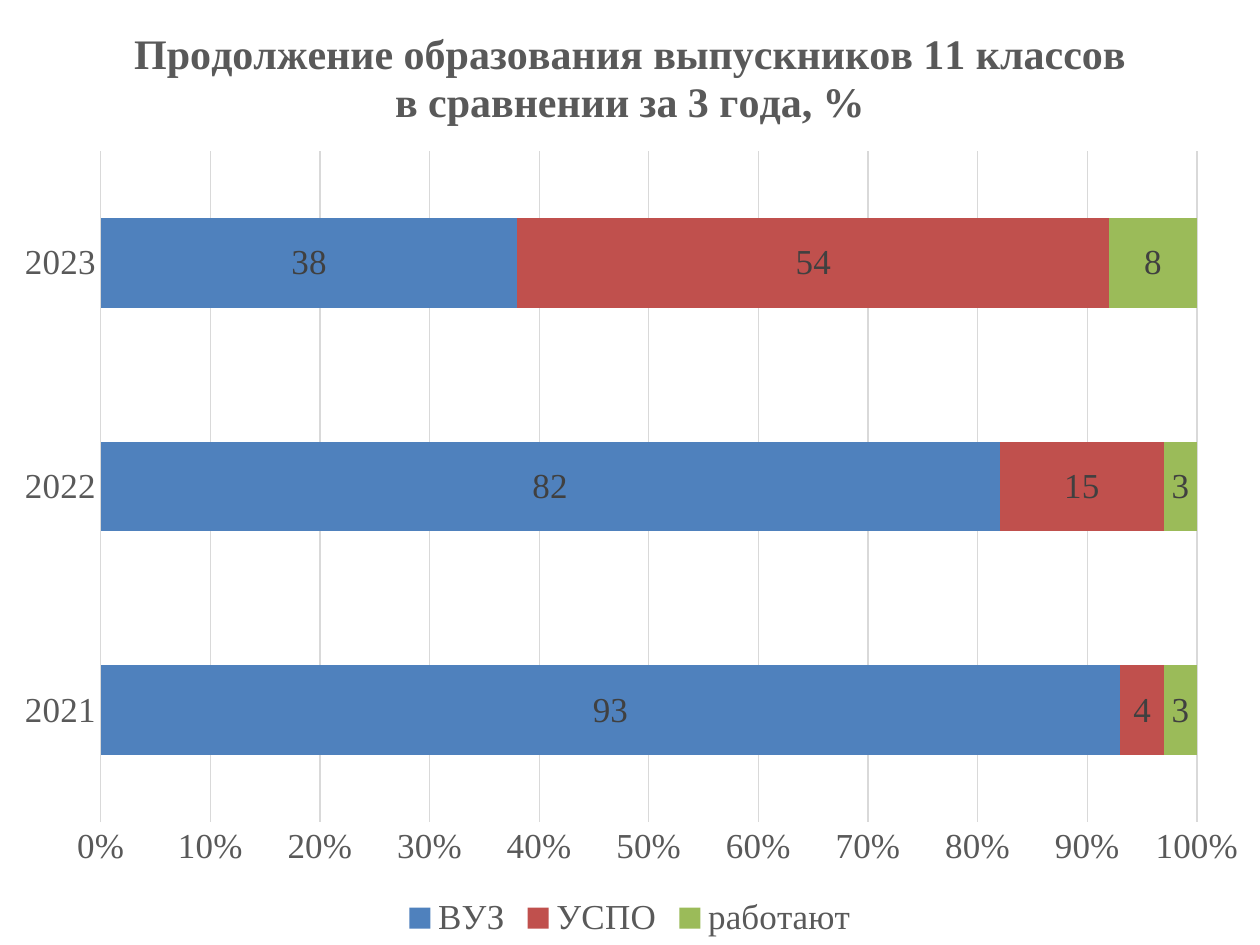
"""Build a slide with a 100% stacked bar chart of graduates' paths over three years."""
from lxml.etree import SubElement
from pptx import Presentation
from pptx.chart.data import CategoryChartData
from pptx.dml.color import RGBColor
from pptx.enum.chart import XL_CHART_TYPE as ChartType
from pptx.enum.chart import XL_LABEL_POSITION as LabelPosition
from pptx.enum.chart import XL_LEGEND_POSITION as LegendPosition
from pptx.enum.chart import XL_TICK_MARK as TickMark
from pptx.oxml.ns import qn
from pptx.util import Pt

TITLE = ["Продолжение образования выпускников 11 классов", "в сравнении за 3 года, %"]
YEARS = ["2021", "2022", "2023"]
SERIES = [
    ("ВУЗ", [93, 82, 38], "university"),
    ("УСПО", [4, 15, 54], "college"),
    ("работают", [3, 3, 8], "work"),
]
COLORS = {
    "university": "4F81BD",
    "college": "C0504D",
    "work": "9BBB59",
    "text": "595959",
    "label": "404040",
    "grid": "D9D9D9",
}
FONT = "Times New Roman"
WIDTH, HEIGHT = 720, 540
PLOT = {"x": 0.08, "y": 0.16, "w": 0.87, "h": 0.71}


def color(name):
    return RGBColor.from_string(COLORS[name])


def style_font(font, size=20, name="text", bold=False):
    font.name, font.size, font.bold = FONT, Pt(size), bold
    font.color.rgb = color(name)


def style_line(line):
    line.color.rgb = color("grid")
    line.width = Pt(0.75)


def add_title(chart):
    frame = chart.chart_title.text_frame
    for index, text in enumerate(TITLE):
        para = frame.add_paragraph() if index else frame.paragraphs[0]
        span = para.add_run()
        span.text = text
        style_font(span.font, 24, bold=True)


def place_plot(chart):
    area = chart.element.find(f"{qn('c:chart')}/{qn('c:plotArea')}")
    for old in area.findall(qn("c:layout")):
        area.remove(old)
    layout = SubElement(area, qn("c:layout"))
    area.insert(0, layout)
    manual = SubElement(layout, qn("c:manualLayout"))
    settings = {"layoutTarget": "inner", "xMode": "edge", "yMode": "edge", **PLOT}
    for tag, value in settings.items():
        SubElement(manual, qn(f"c:{tag}")).set("val", str(value))


def style_axes(chart):
    for axis in (chart.category_axis, chart.value_axis):
        axis.major_tick_mark = axis.minor_tick_mark = TickMark.NONE
        style_font(axis.tick_labels.font)
    style_line(chart.category_axis.format.line)
    values = chart.value_axis
    values.minimum_scale, values.maximum_scale, values.major_unit = 0, 1, 0.1
    values.format.line.fill.background()
    values.has_major_gridlines = True
    style_line(values.major_gridlines.format.line)
    values.tick_labels.number_format = "0%"
    values.tick_labels.number_format_is_linked = False


def style_bars(chart):
    plot = chart.plots[0]
    plot.gap_width, plot.overlap = 150, 100
    for series, (_, _, fill_name) in zip(plot.series, SERIES):
        series.format.fill.solid()
        series.format.fill.fore_color.rgb = color(fill_name)
        labels = series.data_labels
        labels.show_value = True
        labels.position = LabelPosition.CENTER
        labels.number_format, labels.number_format_is_linked = "0", False
        style_font(labels.font, name="label")


def main():
    deck = Presentation()
    deck.slide_width, deck.slide_height = Pt(WIDTH), Pt(HEIGHT)
    page = deck.slides.add_slide(deck.slide_layouts[6])
    data = CategoryChartData(number_format="0")
    data.categories = YEARS
    for name, values, _ in SERIES:
        data.add_series(name, values)
    chart = page.shapes.add_chart(
        ChartType.BAR_STACKED_100, 0, 0, Pt(WIDTH), Pt(HEIGHT), data
    ).chart
    chart.font.name, chart.font.size = FONT, Pt(20)
    add_title(chart)
    place_plot(chart)
    style_axes(chart)
    style_bars(chart)
    chart.has_legend = True
    chart.legend.position = LegendPosition.BOTTOM
    chart.legend.include_in_layout = False
    style_font(chart.legend.font)
    deck.save("out.pptx")


if __name__ == "__main__":
    main()
